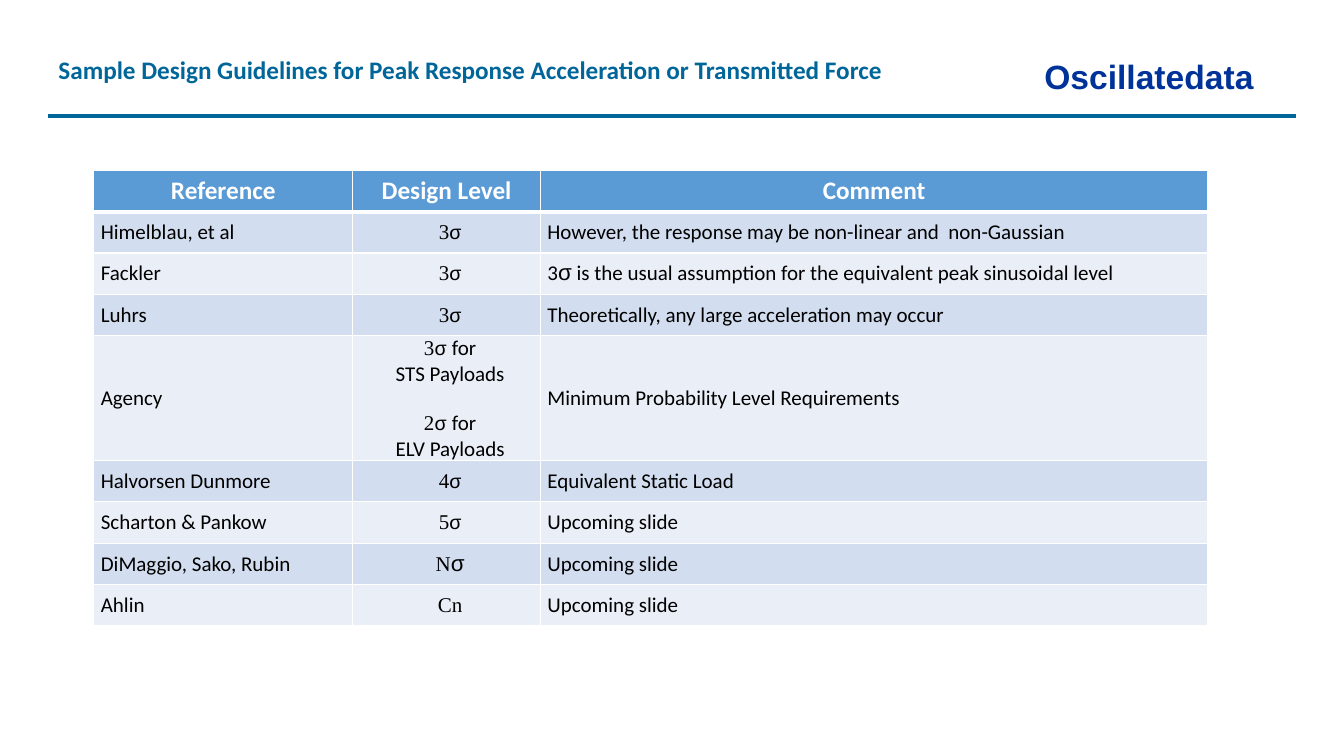
from dataclasses import dataclass

import pptx
import pptx.dml.color
import pptx.enum.shapes
import pptx.enum.text
import pptx.oxml
import pptx.oxml.ns
import pptx.util

Inches, Pt = pptx.util.Inches, pptx.util.Pt
ALIGN, ANCHOR = pptx.enum.text.PP_ALIGN, pptx.enum.text.MSO_ANCHOR
BLUE, NAVY, WHITE, BLACK = "006699", "003399", "FFFFFF", "000000"
HEAD, BANDS = "5B9BD5", ("D2DEEF", "EAEFF7")


@dataclass
class Run:
    text: str
    font: str = "Calibri"
    size: int = 15


@dataclass
class Line:
    runs: list[Run]
    gap: int = 0


@dataclass
class Row:
    source: str
    level: list[Line]
    note: list[Run]
    height: float = 0.41


def sigma(digit: str, size: int = 14) -> list[Run]:
    return [Run(digit, "Times New Roman"), Run("σ", "Arial", size)]


def payload(digit: str, craft: str, gap: int = 0) -> list[Line]:
    return [Line([*sigma(digit), Run(" ", "Times New Roman"), Run("for")], gap),
            Line([Run(f"{craft} Payloads")])]


SOON = [Run("Upcoming slide")]
TITLES = ("Reference", "Design Level", "Comment")
WIDTHS = (2.57, 1.86, 6.62)
ROWS = [
    Row("Himelblau, et al", [Line(sigma("3"))],
        [Run("However, the response may be non-linear and  non-Gaussian")]),
    Row("Fackler", [Line(sigma("3"))],
        [Run("3"), Run("σ", "Arial", 16),
         Run(" is the usual assumption for the equivalent peak sinusoidal level")]),
    Row("Luhrs", [Line(sigma("3"))],
        [Run("Theoretically, any large acceleration may occur")]),
    Row("Agency", payload("3", "STS") + payload("2", "ELV", 17),
        [Run("Minimum Probability Level Requirements")], 1.24),
    Row("Halvorsen Dunmore", [Line(sigma("4"))], [Run("Equivalent Static Load")]),
    Row("Scharton & Pankow", [Line(sigma("5"))], SOON),
    Row("DiMaggio, Sako, Rubin", [Line(sigma("N", 16))], SOON),
    Row("Ahlin", [Line([Run("Cn", "Times New Roman")])], SOON),
]


def color(code: str) -> pptx.dml.color.RGBColor:
    return pptx.dml.color.RGBColor.from_string(code)


def style(font, name: str, size: int, code: str, bold: bool = False) -> None:
    font.name, font.size, font.bold = name, Pt(size), bold
    font.color.rgb = color(code)


def dress(cell, code: str, base: int = 1) -> None:
    """Draw white borders, then fill the cell."""
    props = cell._tc.get_or_add_tcPr()
    for side, width in (("L", 1), ("R", 1), ("T", 1), ("B", base)):
        props.append(pptx.oxml.parse_xml(
            f'<a:ln{side} {pptx.oxml.ns.nsdecls("a")} w="{Pt(width)}">'
            f'<a:solidFill><a:srgbClr val="{WHITE}"/></a:solidFill></a:ln{side}>'))
    cell.fill.solid()
    cell.fill.fore_color.rgb = color(code)


def write(cell, lines: list[Line], align) -> None:
    cell.vertical_anchor = ANCHOR.MIDDLE
    cell.margin_left = Inches(0.07)
    cell.margin_right = cell.margin_top = cell.margin_bottom = 0
    frame = cell.text_frame
    for index, line in enumerate(lines):
        para = frame.add_paragraph() if index else frame.paragraphs[0]
        para.alignment = align
        para.space_before = Pt(line.gap)
        for item in line.runs:
            run = para.add_run()
            run.text = item.text
            style(run.font, item.font, item.size, BLACK)


def add_grid(slide) -> None:
    height = 0.41 + sum(row.height for row in ROWS)
    table = slide.shapes.add_table(
        len(ROWS) + 1, len(WIDTHS), Inches(0.93), Inches(1.69),
        Inches(sum(WIDTHS)), Inches(height)).table
    table.horz_banding = False
    for column, width in zip(table.columns, WIDTHS):
        column.width = Inches(width)

    # Header row
    table.rows[0].height = Inches(0.41)
    for cell, text in zip(table.rows[0].cells, TITLES):
        dress(cell, HEAD, 3)
        cell.text = text
        para = cell.text_frame.paragraphs[0]
        para.alignment = ALIGN.CENTER
        style(para.font, "Calibri", 18, WHITE, True)

    # Body rows
    for index, row in enumerate(ROWS):
        table.rows[index + 1].height = Inches(row.height)
        cells = list(table.rows[index + 1].cells)
        for cell in cells:
            dress(cell, BANDS[index % 2])
        write(cells[0], [Line([Run(row.source)])], ALIGN.LEFT)
        write(cells[1], row.level, ALIGN.CENTER)
        write(cells[2], [Line(row.note)], ALIGN.LEFT)


def main() -> None:
    deck = pptx.Presentation()
    deck.slide_width, deck.slide_height = Inches(13.33), Inches(7.5)
    slide = deck.slides.add_slide(deck.slide_layouts[5])

    # Title
    title = slide.shapes.title
    title.left, title.top = Inches(0.48), Inches(0.49)
    title.width, title.height = Inches(9.03), Inches(0.4)
    frame = title.text_frame
    frame.text = "Sample Design Guidelines for Peak Response Acceleration or Transmitted Force"
    frame.auto_size = pptx.enum.text.MSO_AUTO_SIZE.NONE
    frame.vertical_anchor = ANCHOR.TOP
    frame.paragraphs[0].alignment = ALIGN.LEFT
    style(frame.paragraphs[0].font, "Calibri", 18, BLUE, True)

    # Name of the publisher
    label = slide.shapes.add_textbox(
        Inches(10.26), Inches(0.51), Inches(2.33), Inches(0.5)).text_frame
    label.text = "Oscillatedata"
    label.word_wrap = False
    style(label.paragraphs[0].font, "Arial", 24, NAVY, True)

    # Rule under the title
    rule = slide.shapes.add_connector(
        pptx.enum.shapes.MSO_CONNECTOR.STRAIGHT,
        Inches(0.48), Inches(1.15), Inches(12.85), Inches(1.15))
    rule.line.color.rgb = color(BLUE)
    rule.line.width = Pt(2.5)
    rule._element.spPr.append(pptx.oxml.parse_xml(
        f'<a:effectLst {pptx.oxml.ns.nsdecls("a")}/>'))

    add_grid(slide)
    deck.save("out.pptx")


if __name__ == "__main__":
    main()
